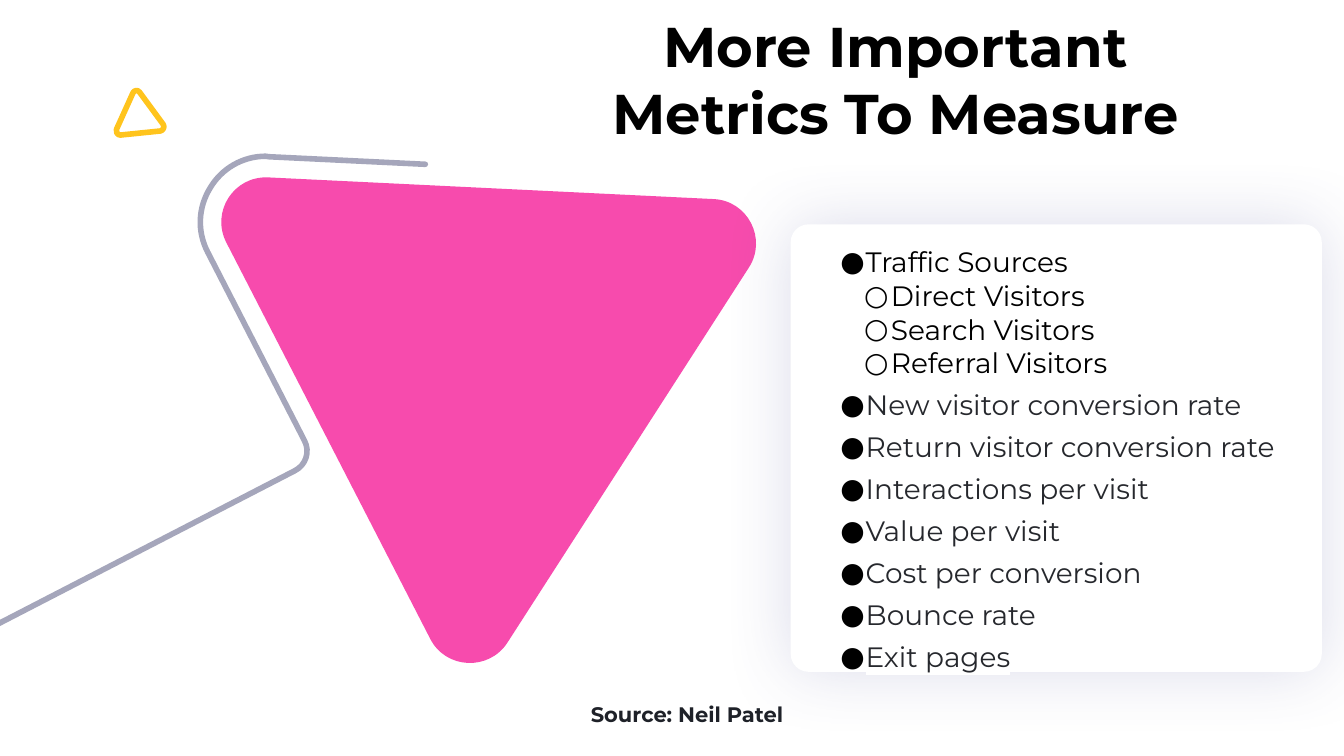
from lxml import etree
from pptx import Presentation
from pptx.dml.color import RGBColor
from pptx.enum import shapes, text
from pptx.oxml import ns
from pptx.util import Inches, Pt

COLOURS = {"pink": "F74BAD", "grey": "A5A6BB", "yellow": "FFC41D", "white": "FFFFFF",
           "black": "000000", "ink": "26282D", "source": "1E2128", "glow": "50529A"}
FONT = "Montserrat"

TRIANGLE = [(14.16, 3.95), (5.32, 3.52), (4.64, 3.49, 4.18, 4.2, 4.49, 4.81), (8.54, 12.68),
            (8.85, 13.28, 9.7, 13.32, 10.07, 12.75), (14.86, 5.31),
            (15.23, 4.74, 14.84, 3.98, 14.16, 3.95)]
TRAIL = [(-0.04, 12.38), (5.85, 9.34), (6.07, 9.23, 6.16, 8.96, 6.04, 8.74), (4.12, 5),
         (3.91, 4.59, 3.93, 4.12, 4.17, 3.73), (4.4, 3.34, 4.82, 3.1, 5.27, 3.1),
         (5.29, 3.1, 5.32, 3.1, 5.34, 3.11), (8.44, 3.26)]
ACCENT = [(2.39, 2.68), (3.18, 2.6), (3.24, 2.59, 3.27, 2.52, 3.24, 2.47), (2.77, 1.83),
          (2.74, 1.78, 2.66, 1.79, 2.64, 1.84), (2.31, 2.57),
          (2.29, 2.62, 2.33, 2.68, 2.39, 2.68)]

SOURCES = ["Direct Visitors", "Search Visitors", "Referral Visitors"]
METRICS = ["New visitor conversion rate", "Return visitor conversion rate",
           "Interactions per visit", "Value per visit", "Cost per conversion",
           "Bounce rate", "Exit pages"]


def rgb(name):
    """Return the named colour."""
    return RGBColor.from_string(COLOURS[name])


def add_xml(parent, tag, **attributes):
    """Append a DrawingML element and return it."""
    return etree.SubElement(parent, ns.qn(tag), attributes)


def bend(outline, segments):
    """Merge each three lines that stand for a curve into one cubic curve."""
    lines = iter(list(outline._element.iter(ns.qn("a:lnTo"))))
    for segment in segments[1:]:
        first = next(lines)
        if len(segment) == 6:
            first.tag = ns.qn("a:cubicBezTo")
            for _ in range(2):
                line = next(lines)
                first.append(line[0])
                line.getparent().remove(line)


def add_outline(slide, segments, fill=None, line=None, close=True):
    """Draw an outline of straight and curved segments."""
    points = [(Inches(x), Inches(y)) for segment in segments
              for x, y in zip(segment[::2], segment[1::2])]
    builder = slide.shapes.build_freeform(*points[0])
    builder.add_line_segments(points[1:], close=close)
    outline = builder.convert_to_shape()
    bend(outline, segments)
    outline.shadow.inherit = False
    if fill:
        outline.fill.solid()
        outline.fill.fore_color.rgb = rgb(fill)
    else:
        outline.fill.background()
    if line:
        outline.line.color.rgb = rgb(line)
        outline.line.width = Pt(8)
        outline.line._get_or_add_ln().set("cap", "rnd")
    else:
        outline.line.fill.background()


def add_card(slide, left, top, width, height):
    """Add the white rounded card with its soft glow."""
    card = slide.shapes.add_shape(shapes.MSO_SHAPE.ROUNDED_RECTANGLE, Inches(left),
                                  Inches(top), Inches(width), Inches(height))
    card.adjustments[0] = 0.04
    card.fill.solid()
    card.fill.fore_color.rgb = rgb("white")
    card.line.fill.background()
    card.shadow.inherit = False
    effects = card._element.spPr.find(ns.qn("a:effectLst"))
    glow = add_xml(effects, "a:outerShdw", blurRad=str(Pt(100)), dist="0", dir="0",
                   algn="ctr", rotWithShape="0")
    tint = add_xml(glow, "a:srgbClr", val=COLOURS["glow"])
    add_xml(tint, "a:alpha", val="20000")


def set_font(paragraph, size, colour, bold=False):
    """Format a whole paragraph."""
    font = paragraph.font
    font.name, font.size, font.bold = FONT, Pt(size), bold
    font.color.rgb = rgb(colour)


def set_frame(frame, inset_x, inset_y):
    """Set wrapping, insets and anchoring of a text frame."""
    frame.word_wrap = True
    frame.auto_size = text.MSO_AUTO_SIZE.NONE
    frame.vertical_anchor = text.MSO_ANCHOR.TOP
    frame.margin_left = frame.margin_right = Inches(inset_x)
    frame.margin_top = frame.margin_bottom = Inches(inset_y)


def add_text_frame(slide, left, top, width, height, inset_y):
    """Add a wrapping text box and return its frame."""
    box = slide.shapes.add_textbox(Inches(left), Inches(top), Inches(width), Inches(height))
    set_frame(box.text_frame, 0.1, inset_y)
    return box.text_frame


def set_title(slide, heading):
    """Place and format the title."""
    title = slide.shapes.title
    title.left, title.top = Inches(10.97), Inches(0.23)
    title.width, title.height = Inches(13.6), Inches(2.88)
    set_frame(title.text_frame, 0, 0)
    title.text_frame.text = heading
    paragraph = title.text_frame.paragraphs[0]
    paragraph.alignment = text.PP_ALIGN.CENTER
    set_font(paragraph, 80, "black", bold=True)


def fill_bullet(paragraph, wording, level=0, highlighted=False):
    """Write one bulleted metric."""
    metric = paragraph.add_run()
    metric.text = wording
    paragraph.level = level
    properties = paragraph._p.get_or_add_pPr()
    properties.set("marL", str(Inches(0.5 * (level + 1))))
    properties.set("indent", str(Inches(-0.53)))
    add_xml(add_xml(properties, "a:buClr"), "a:srgbClr", val=COLOURS["black"])
    add_xml(properties, "a:buFont", typeface=FONT)
    add_xml(properties, "a:buChar", char="●○"[level])
    if highlighted:
        paragraph.line_spacing = 1.25
        highlight = add_xml(metric._r.get_or_add_rPr(), "a:highlight")
        add_xml(highlight, "a:srgbClr", val=COLOURS["white"])
    set_font(paragraph, 40, "ink" if highlighted else "black")


def add_metrics(slide):
    """List the traffic sources and the other metrics."""
    frame = add_text_frame(slide, 16.58, 4.76, 10.05, 7.78, 0.1)
    fill_bullet(frame.paragraphs[0], "Traffic Sources")
    for source in SOURCES:
        fill_bullet(frame.add_paragraph(), source, level=1)
    for metric in METRICS:
        fill_bullet(frame.add_paragraph(), metric, highlighted=True)


def add_credit(slide, wording):
    """Add the centred source line."""
    frame = add_text_frame(slide, 9.01, 13.86, 9.25, 0.61, 0.05)
    frame.text = wording
    credit = frame.paragraphs[0]
    credit.alignment = text.PP_ALIGN.CENTER
    set_font(credit, 30, "source", bold=True)


def main():
    """Build and save the metrics slide."""
    deck = Presentation()
    deck.slide_width, deck.slide_height = Inches(26.67), Inches(15)
    slide = deck.slides.add_slide(deck.slide_layouts[5])
    set_title(slide, "More Important Metrics To Measure")
    add_outline(slide, TRIANGLE, fill="pink")
    add_outline(slide, TRAIL, line="grey", close=False)
    add_outline(slide, ACCENT, line="yellow")
    add_card(slide, 15.69, 4.45, 10.54, 8.88)
    add_metrics(slide)
    add_credit(slide, "Source: Neil Patel")
    deck.save("out.pptx")


if __name__ == "__main__":
    main()
